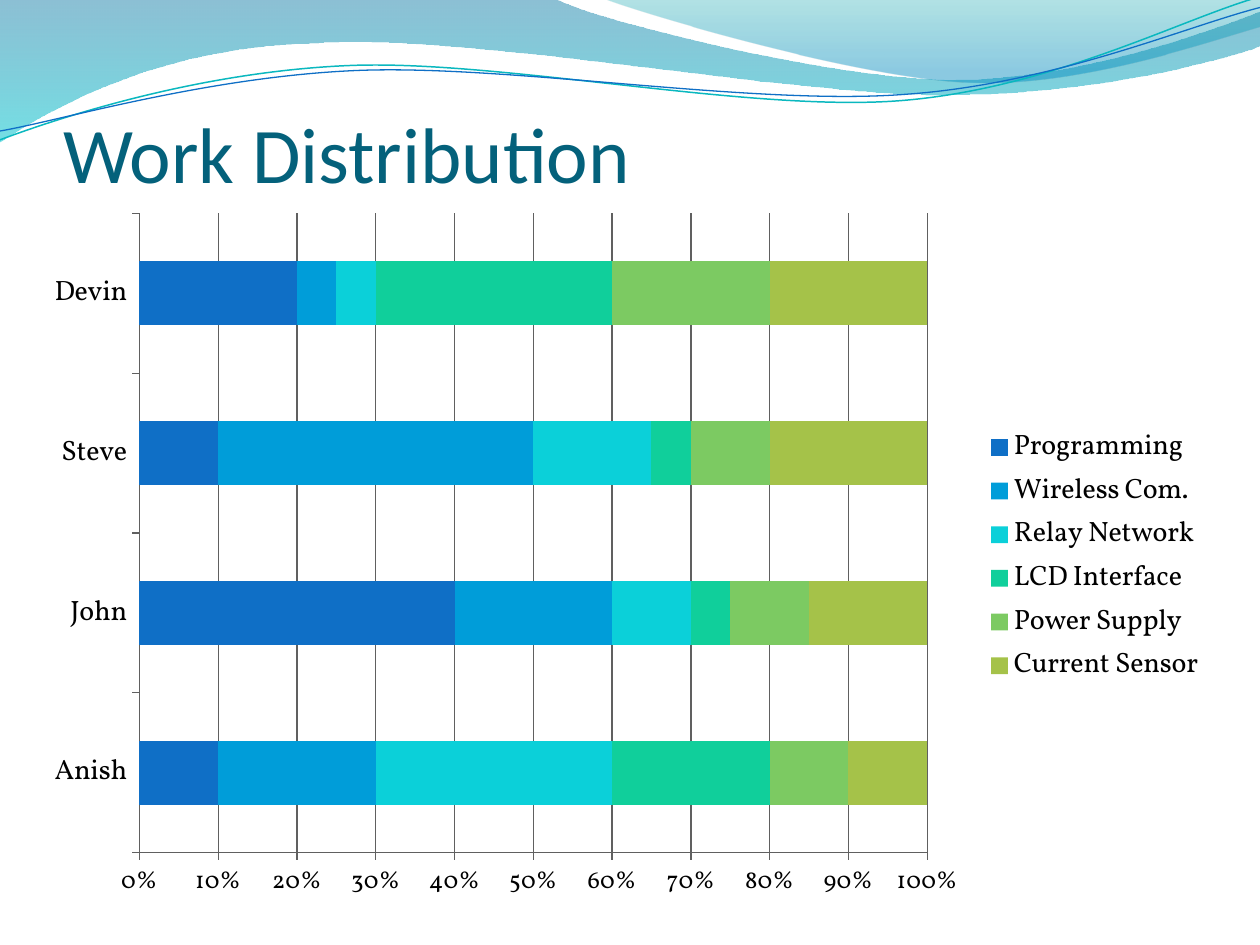
"""Build the Work Distribution slide: waves, a title and a stacked bar chart."""
import math

from lxml import etree
from pptx import Presentation
from pptx import util as u
from pptx.chart import data
from pptx.dml import color as dml
from pptx.enum import chart as charts, text
from pptx.oxml import ns, parse_xml

COLORS = {
    "title": "04617B", "text": "000000", "grid": "606060",
    "deep": "0074A1", "aqua": "00C6CF", "teal": "00A1A9", "sky": "008BBF",
    "teal line": "0AB8BF", "blue line": "0F6FC6",
    "Programming": "0F6FC6", "Wireless Com.": "009DD9", "Relay Network": "0BD0D9",
    "LCD Interface": "10CF9B", "Power Supply": "7CCA62", "Current Sensor": "A5C249",
}


def write_text(frame, content, size, font, color, anchor):
    frame.text = content
    frame.word_wrap = True
    frame.auto_size = text.MSO_AUTO_SIZE.NONE
    frame.vertical_anchor = anchor
    frame.margin_left = frame.margin_right = frame.margin_bottom = 0
    frame.margin_top = u.Cm(0.13)
    paragraph = frame.paragraphs[0]
    paragraph.alignment = text.PP_ALIGN.LEFT
    paragraph.font.size = u.Pt(size)
    paragraph.font.name = font
    paragraph.font.color.rgb = dml.RGBColor.from_string(COLORS[color])


def draw_wave(shapes, start, segments, close=False, center=(0, 0), tilt=0):
    points = [start] + [segment[i:i + 2] for segment in segments for i in range(0, len(segment), 2)]
    cosine, sine = math.cos(math.radians(tilt)), math.sin(math.radians(tilt))
    offsets = [(x - center[0], y - center[1]) for x, y in points]
    points = [(u.Cm(2.54 * (center[0] + x * cosine + y * sine)),
               u.Cm(2.54 * (center[1] - x * sine + y * cosine))) for x, y in offsets]
    builder = shapes.build_freeform(*points[0])
    builder.add_line_segments(points[1:], close=close)
    shape = builder.convert_to_shape()
    shape.shadow.inherit = False
    shape.rotation = tilt % 360
    lines = iter(list(shape.element.spPr.iter(ns.qn("a:lnTo"))))
    for segment in segments:
        line = next(lines)
        if len(segment) == 6:
            curve = etree.Element(ns.qn("a:cubicBezTo"))
            line.addprevious(curve)
            for corner in (line, next(lines), next(lines)):
                curve.append(corner[0])
                corner.getparent().remove(corner)
    return shape


presentation = Presentation()
presentation.slide_width, presentation.slide_height = u.Cm(25.4), u.Cm(19.05)
slide = presentation.slides.add_slide(presentation.slide_layouts[5])

bands = [
    ((0, 0), [(4.4, -0.01), (4.76, 0.17, 6.64, 0.63, 7.58, 0.63),
              (8.53, 0.63, 9.58, 0.26, 10, 0.09), (10.01, 0.36),
              (9.83, 0.44, 8.7, 0.76, 7.46, 0.75), (6.22, 0.75, 3.82, 0.28, 2.57, 0.34),
              (1.29, 0.36, 0.46, 0.83, -0.01, 1.13), (0, 0)],
     [(0, "deep", 45), (1, "aqua", 55)]),
    ((4.79, -0.01), [(5.09, 0.11, 6.82, 0.62, 7.69, 0.65),
                     (8.56, 0.69, 9.61, 0.32, 10, 0.21), (10, 0), (4.79, -0.01)],
     [(0, "teal", 30), (0.8, "sky", 45)]),
]
for start, segments, stops in bands:
    band = draw_wave(slide.shapes, start, segments, close=True)
    band.line.fill.background()
    band.fill.gradient()
    band.fill.gradient_angle = 270
    for stop, (position, color, opacity) in zip(band.fill.gradient_stops, stops):
        stop.position = position
        stop.color.rgb = dml.RGBColor.from_string(COLORS[color])
    for node, (position, color, opacity) in zip(band.element.spPr.iter(ns.qn("a:srgbClr")), stops):
        etree.SubElement(node, ns.qn("a:alpha")).set("val", str(opacity * 1000))

strands = [
    ((0, 1.11), [(0.48, 0.93, 1.58, 0.57, 2.77, 0.52), (3.95, 0.47, 5.93, 0.89, 7.13, 0.8),
                 (8.33, 0.71, 9.38, 0.15, 9.98, -0.02)], "teal line", 0.85, (4.99, 0.575)),
    ((0, 1.04), [(0.47, 0.96, 1.64, 0.61, 2.83, 0.56), (4.03, 0.51, 5.97, 0.84, 7.17, 0.75),
                 (8.36, 0.67, 9.41, 0.21, 10, 0.06)], "blue line", 0.75, (5, 0.59)),
]
strand_group = slide.shapes.add_group_shape()
for start, segments, color, width, center in strands:
    strand = draw_wave(strand_group.shapes, start, segments, center=center, tilt=-2.7)
    strand.fill.background()
    strand.line.color.rgb = dml.RGBColor.from_string(COLORS[color])
    strand.line.width = u.Pt(width)

title = slide.shapes.title
title.left, title.top, title.width, title.height = u.Cm(1.27), u.Cm(1.96), u.Cm(22.86), u.Cm(2.06)
write_text(title.text_frame, "Work Distribution", size=45, font="Calibri", color="title",
           anchor=text.MSO_ANCHOR.BOTTOM)
strand_group.element.addnext(title.element)

shares = data.CategoryChartData(number_format="General")
shares.categories = ["Anish", "John", "Steve", "Devin"]
for task, values in [
    ("Programming", (10, 40, 10, 20)),
    ("Wireless Com.", (20, 20, 40, 5)),
    ("Relay Network", (30, 10, 15, 5)),
    ("LCD Interface", (20, 5, 5, 30)),
    ("Power Supply", (10, 10, 10, 20)),
    ("Current Sensor", (10, 15, 20, 20)),
]:
    shares.add_series(task, values)
chart = slide.shapes.add_chart(charts.XL_CHART_TYPE.BAR_STACKED_100, u.Cm(0.63), u.Cm(4.03),
                               u.Cm(23.92), u.Cm(14.38), shares).chart
chart.has_title = False
chart.font.name = "Vollkorn"
chart.font.size = u.Pt(14)
chart.font.color.rgb = dml.RGBColor.from_string(COLORS["text"])

plot = chart.plots[0]
plot.gap_width, plot.overlap, plot.vary_by_categories = 150, 100, False
for series in plot.series:
    series.format.fill.solid()
    series.format.fill.fore_color.rgb = dml.RGBColor.from_string(COLORS[series.name])

value_axis, category_axis = chart.value_axis, chart.category_axis
value_axis.has_major_gridlines = True
value_axis.tick_labels.number_format = "0%"
value_axis.tick_labels.number_format_is_linked = False
value_axis.major_unit = 0.1
category_axis.tick_labels.font.size = u.Pt(16)
for axis in (value_axis, category_axis):
    axis.major_tick_mark = charts.XL_TICK_MARK.OUTSIDE
for part in (value_axis, category_axis, value_axis.major_gridlines):
    part.format.line.color.rgb = dml.RGBColor.from_string(COLORS["grid"])
    part.format.line.width = u.Pt(0.75)

chart.has_legend = True
chart.legend.position = charts.XL_LEGEND_POSITION.RIGHT
chart.legend.include_in_layout = False
chart.legend.font.size = u.Pt(16)

plot_area = chart.element.chart.plotArea
for layout in plot_area.findall(ns.qn("c:layout")):
    plot_area.remove(layout)
placement = "".join(f'<c:{tag} val="{value}"/>' for tag, value in [
    ("layoutTarget", "inner"), ("xMode", "edge"), ("yMode", "edge"),
    ("x", 0.0912), ("y", 0.019), ("w", 0.664), ("h", 0.896)])
plot_area.insert(0, parse_xml(
    f'<c:layout {ns.nsdecls("c")}><c:manualLayout>{placement}</c:manualLayout></c:layout>'))

presentation.save("out.pptx")
